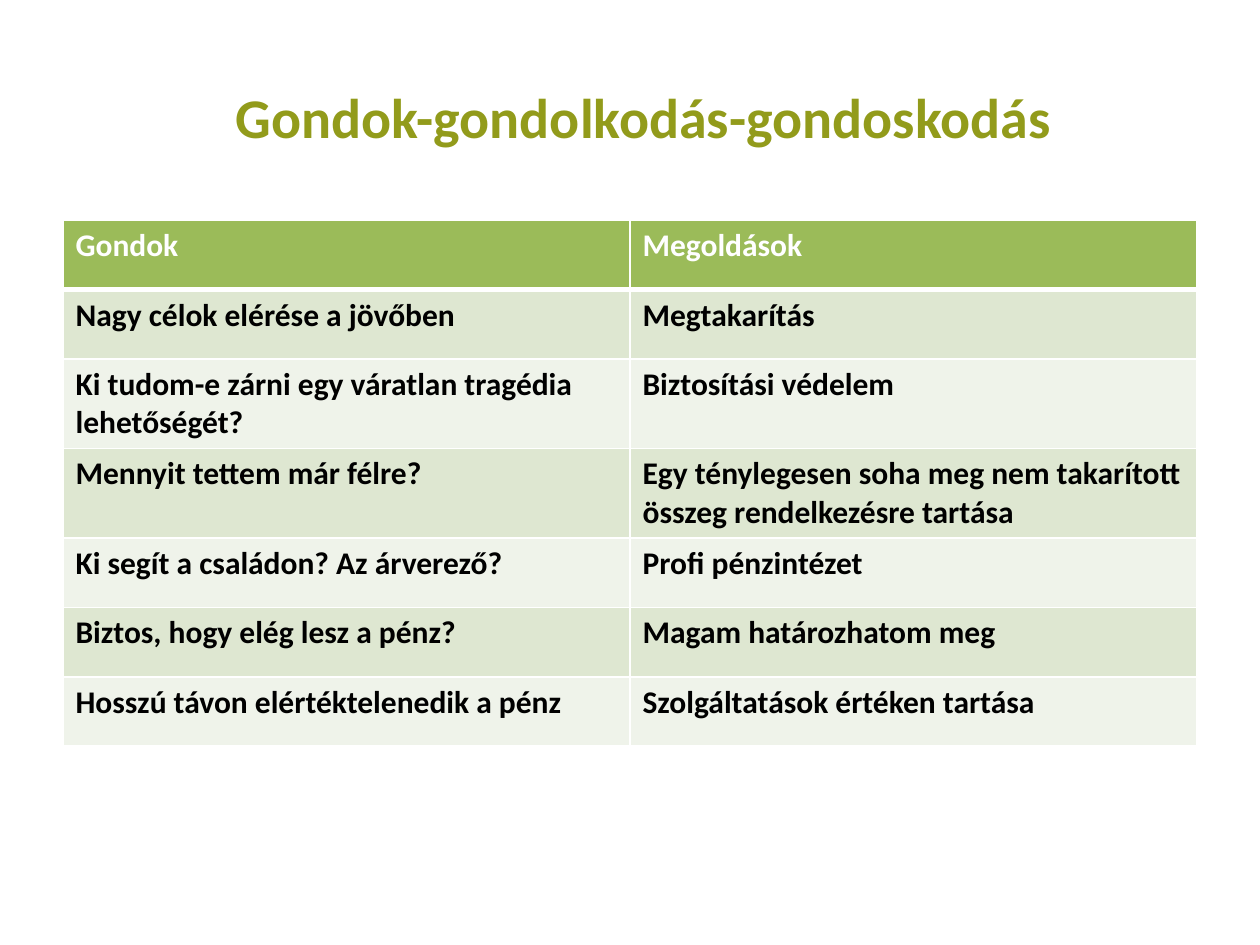
from dataclasses import dataclass

from lxml.etree import SubElement
from pptx import Presentation
from pptx.dml.color import RGBColor as Color
from pptx.enum.text import MSO_ANCHOR as Anchor, PP_ALIGN as Align
from pptx.oxml.ns import qn
from pptx.slide import Slide
from pptx.table import _Cell as Cell
from pptx.util import Inches, Pt


@dataclass(frozen=True)
class Theme:
    font: str = "Calibri"
    title_size: int = 32
    table_size: int = 18
    title: str = "929B1B"
    header: str = "9BBB59"
    bands: tuple[str, str] = ("DEE7D1", "EFF3EA")
    header_text: str = "FFFFFF"
    body_text: str = "000000"
    border: str = "FFFFFF"
    thin: int = 1
    thick: int = 3


@dataclass(frozen=True)
class Row:
    concern: str
    solution: str


THEME = Theme()
ROWS = [
    Row("Gondok", "Megoldások"),
    Row("Nagy célok elérése a jövőben", "Megtakarítás"),
    Row("Ki tudom-e zárni egy váratlan tragédia lehetőségét?", "Biztosítási védelem"),
    Row("Mennyit tettem már félre?",
        "Egy ténylegesen soha meg nem takarított összeg rendelkezésre tartása"),
    Row("Ki segít a családon? Az árverező?", "Profi pénzintézet"),
    Row("Biztos, hogy elég lesz a pénz?", "Magam határozhatom meg"),
    Row("Hosszú távon elértéktelenedik a pénz", "Szolgáltatások értéken tartása"),
]
ROW_HEIGHT = 0.55


def format_text(text_frame, size: int, color: str) -> None:
    for paragraph in text_frame.paragraphs:
        for run in paragraph.runs:
            run.font.name = THEME.font
            run.font.size = Pt(size)
            run.font.bold = True
            run.font.color.rgb = Color.from_string(color)


def set_borders(cell: Cell, top: int, bottom: int) -> None:
    properties = cell._tc.get_or_add_tcPr()
    widths = {"lnL": THEME.thin, "lnR": THEME.thin, "lnT": top, "lnB": bottom}
    for side, width in widths.items():
        line = SubElement(properties, qn(f"a:{side}"), w=str(Pt(width)))
        fill = SubElement(line, qn("a:solidFill"))
        SubElement(fill, qn("a:srgbClr"), val=THEME.border)


def draw_cell(cell: Cell, text: str, row_index: int) -> None:
    is_header = row_index == 0
    cell.text_frame.text = text
    format_text(cell.text_frame, THEME.table_size,
                THEME.header_text if is_header else THEME.body_text)
    set_borders(cell,
                top=THEME.thick if row_index == 1 else THEME.thin,
                bottom=THEME.thick if is_header else THEME.thin)
    cell.fill.solid()
    cell.fill.fore_color.rgb = Color.from_string(
        THEME.header if is_header else THEME.bands[(row_index - 1) % 2])


def draw_title(slide: Slide, text: str) -> None:
    title = slide.shapes.title
    title.left, title.top = Inches(1.77), Inches(0.3)
    title.width, title.height = Inches(7.73), Inches(1.25)
    title.text_frame.text = text
    title.text_frame.vertical_anchor = Anchor.MIDDLE
    title.text_frame.paragraphs[0].alignment = Align.LEFT
    format_text(title.text_frame, THEME.title_size, THEME.title)


def draw_table(slide: Slide, rows: list[Row]) -> None:
    table = slide.shapes.add_table(
        len(rows), 2, Inches(0.5), Inches(1.75),
        Inches(9), Inches(ROW_HEIGHT * len(rows))).table
    for row_index, row in enumerate(rows):
        table.rows[row_index].height = Inches(ROW_HEIGHT)
        for column_index, text in enumerate((row.concern, row.solution)):
            draw_cell(table.cell(row_index, column_index), text, row_index)


def main() -> None:
    presentation = Presentation()
    presentation.slide_width, presentation.slide_height = Inches(10), Inches(7.5)
    slide = presentation.slides.add_slide(presentation.slide_layouts[5])
    draw_title(slide, "Gondok-gondolkodás-gondoskodás")
    draw_table(slide, ROWS)
    presentation.save("out.pptx")


if __name__ == "__main__":
    main()
